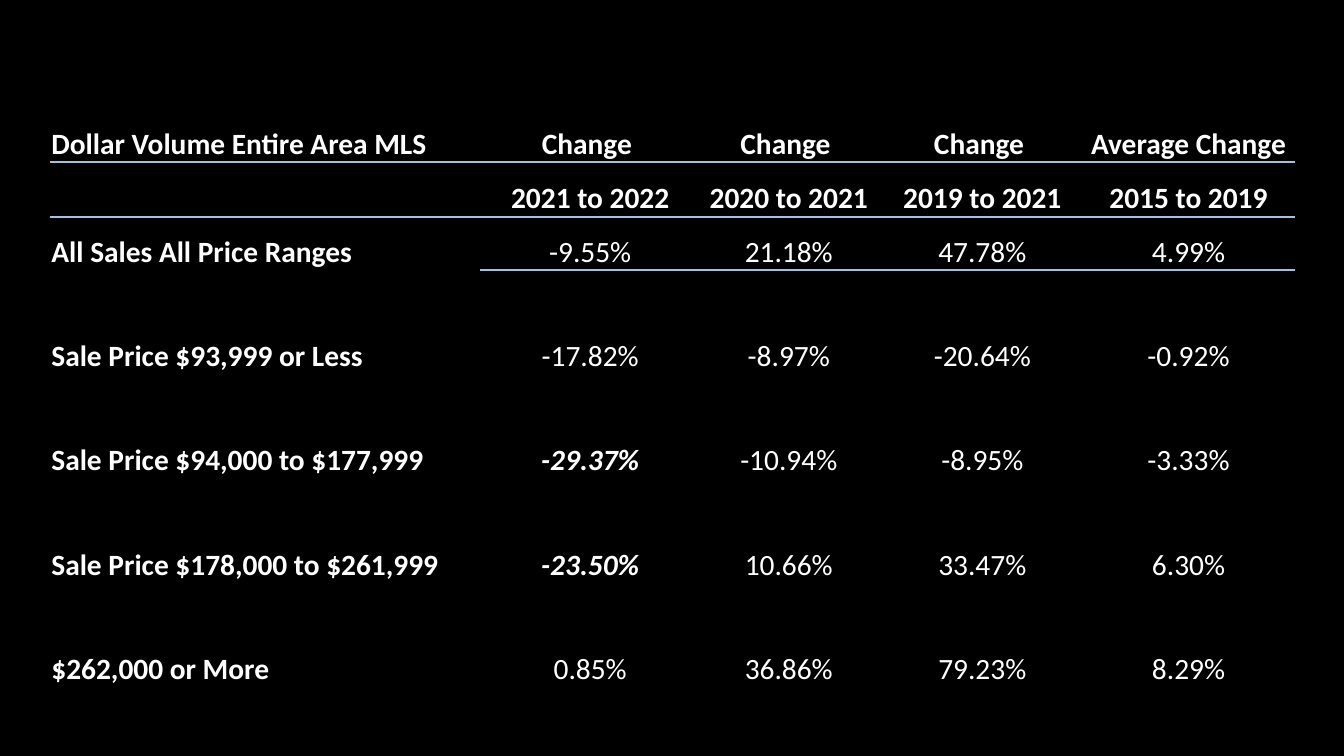
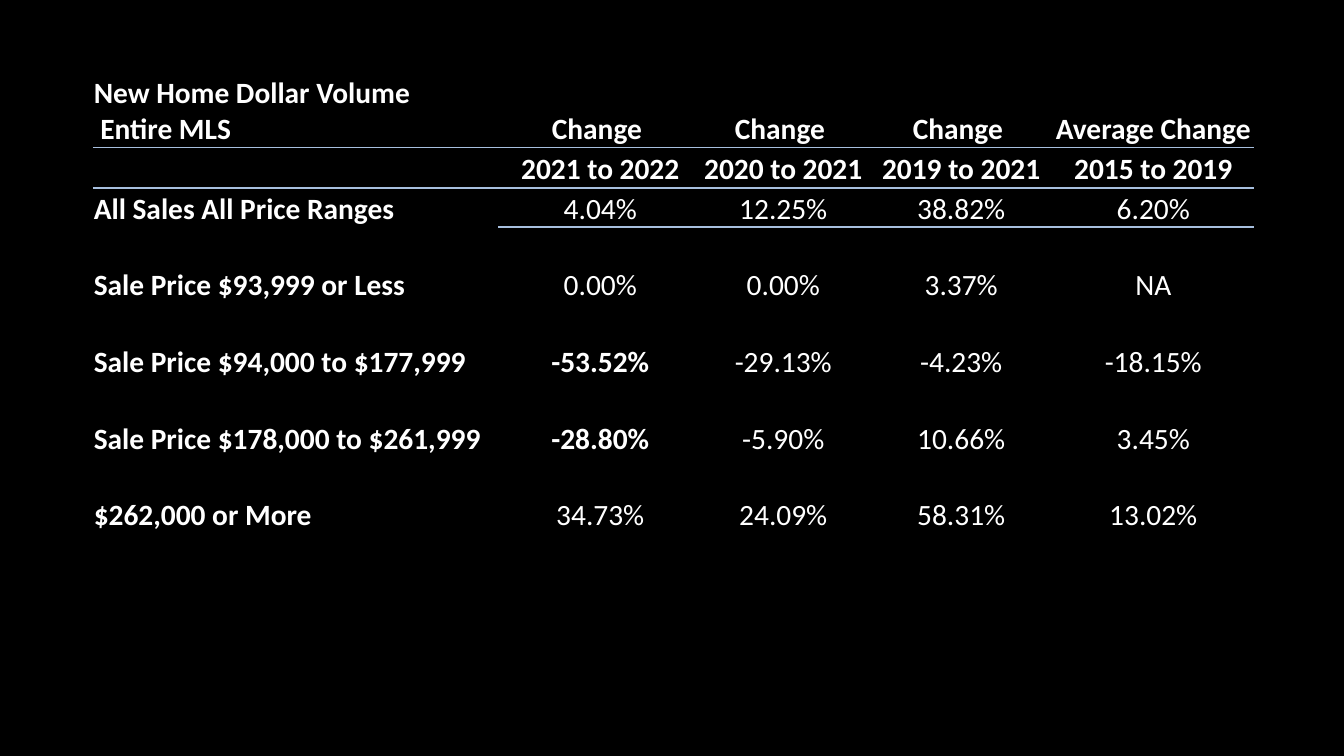
from pptx import Presentation
from pptx.dml.color import RGBColor
from pptx.enum.text import MSO_ANCHOR, PP_ALIGN
from pptx.oxml import parse_xml
from pptx.oxml.ns import nsdecls
from pptx.util import Inches, Pt

COLORS = {"background": "000000", "text": "FFFFFF", "rule": "A7BFDE"}
FONT, TEXT_SIZE, RULE_WIDTH = "Calibri", 21, 1.5
NO_GRID_STYLE = "{2D5ABB26-0587-4C30-8999-92F81FD0307C}"

# Content shared by both tables
MEASURES = ["Change ", "Change ", "Change ", "Average Change"]
PERIODS = ["2021 to 2022", "2020 to 2021", "2019 to 2021", "2015 to 2019"]
PRICE_RANGES = [
    "All Sales All Price Ranges",
    "Sale Price $93,999 or Less",
    "Sale Price $94,000 to $177,999",
    "Sale Price $178,000 to $261,999",
    "$262,000 or More",
]
STRESSED_RANGES = (2, 3)  # their first change is emphasised

# Content and grid of each slide, in inches
VOLUMES = [
    {
        "heading": "Dollar Volume Entire Area MLS",
        "changes": [
            ("-9.55%", "21.18%", "47.78%", "4.99%"),
            ("-17.82%", "-8.97%", "-20.64%", "-0.92%"),
            ("-29.37%", "-10.94%", "-8.95%", "-3.33%"),
            ("-23.50%", "10.66%", "33.47%", "6.30%"),
            ("0.85%", "36.86%", "79.23%", "8.29%"),
        ],
        "stress_italic": True,
        "corner": (0.5, 0.68),
        "columns": (4.26, 0.05, 2.07, 1.87, 1.97, 2.12),
        "top_rows": (0.93, 0.54, 0.53),
        "height": 6.14,
    },
    {
        "heading": "New Home Dollar Volume\n Entire MLS",
        "changes": [
            ("4.04%", "12.25%", "38.82%", "6.20%"),
            ("0.00%", "0.00%", "3.37%", "NA"),
            ("-53.52%", "-29.13%", "-4.23%", "-18.15%"),
            ("-28.80%", "-5.90%", "10.66%", "3.45%"),
            ("34.73%", "24.09%", "58.31%", "13.02%"),
        ],
        "stress_italic": False,
        "corner": (0.92, 0.74),
        "columns": (4.02, 0.04, 1.91, 1.72, 1.81, 2),
        "top_rows": (0.72, 0.4, 0.39),
        "height": 4.55,
    },
]


def table_rows(volume):
    """Two heading rows, then price ranges with an empty row between them."""
    rows = [[volume["heading"], "", *MEASURES], ["", "", *PERIODS]]
    for label, changes in zip(PRICE_RANGES, volume["changes"]):
        rows += [[label, "", *changes], [""] * 6]
    return rows[:-1]


def add_rule(cell, side):
    cell._tc.get_or_add_tcPr().append(parse_xml(
        f'<a:{side} {nsdecls("a")} w="{Pt(RULE_WIDTH)}"><a:solidFill>'
        f'<a:srgbClr val="{COLORS["rule"]}"/></a:solidFill></a:{side}>'))


def fill_cell(cell, text, centered, bold, italic):
    cell.margin_left = cell.margin_right = cell.margin_top = Inches(0.01)
    cell.margin_bottom = 0
    cell.vertical_anchor = MSO_ANCHOR.BOTTOM
    cell.text = text
    for paragraph in cell.text_frame.paragraphs:
        paragraph.alignment = PP_ALIGN.CENTER if centered else PP_ALIGN.LEFT
        font = paragraph.font
        font.name, font.size = FONT, Pt(TEXT_SIZE)
        font.bold, font.italic = bold, italic
        font.color.rgb = RGBColor.from_string(COLORS["text"])


def add_volume_table(slide, volume):
    rows = table_rows(volume)
    columns, top_rows = volume["columns"], volume["top_rows"]
    left, top = volume["corner"]
    table = slide.shapes.add_table(
        len(rows), len(columns), Inches(left), Inches(top),
        Inches(sum(columns)), Inches(volume["height"])).table
    table._tbl.tblPr.find("{*}tableStyleId").text = NO_GRID_STYLE
    table.first_row = table.horz_banding = False

    # Grid: the rows below the top ones share the remaining height
    spare = (volume["height"] - sum(top_rows)) / (len(rows) - len(top_rows))
    heights = [*top_rows] + [spare] * (len(rows) - len(top_rows))
    for column, width in zip(table.columns, columns):
        column.width = Inches(width)
    for row, height in zip(table.rows, heights):
        row.height = Inches(height)

    # Text, then the rules under the two heading rows
    stressed_rows = [2 + 2 * index for index in STRESSED_RANGES]
    for r, texts in enumerate(rows):
        for c, text in enumerate(texts):
            cell = table.cell(r, c)
            stressed = r in stressed_rows and c == 2
            fill_cell(cell, text, c > 0, r < 2 or c == 0 or stressed,
                      stressed and volume["stress_italic"])
            if r == 1 or (r == 2 and c > 0):
                add_rule(cell, "lnT")
            if r == 0 or (r == 1 and c > 0):
                add_rule(cell, "lnB")
            cell.fill.background()


def main():
    prs = Presentation()
    prs.slide_width, prs.slide_height = Inches(13.33), Inches(7.5)
    backdrop = prs.slide_master.background.fill
    backdrop.solid()
    backdrop.fore_color.rgb = RGBColor.from_string(COLORS["background"])
    for volume in VOLUMES:
        add_volume_table(prs.slides.add_slide(prs.slide_layouts[6]), volume)
    prs.save("out.pptx")


if __name__ == "__main__":
    main()
